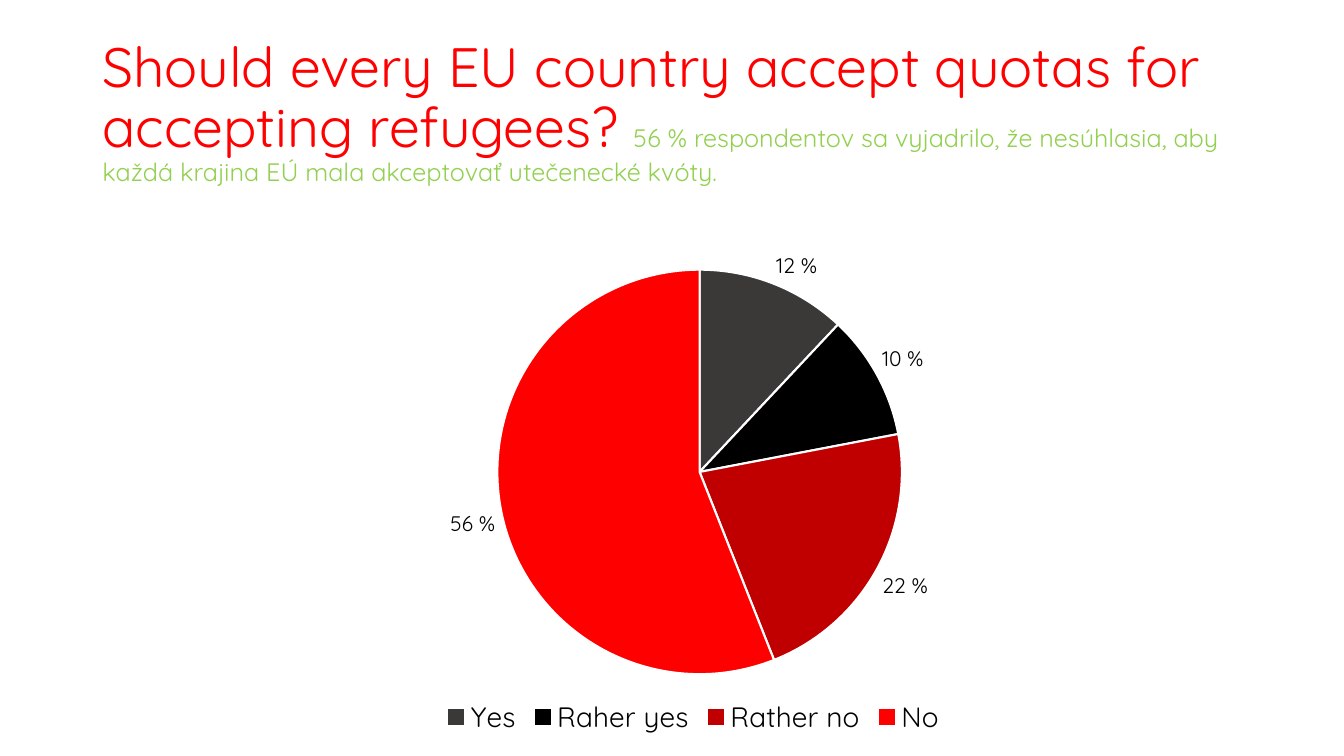
from lxml.etree import SubElement
from pptx import Presentation
from pptx.chart.data import CategoryChartData
from pptx.dml.color import RGBColor
from pptx.enum.chart import XL_CHART_TYPE, XL_LABEL_POSITION, XL_LEGEND_POSITION
from pptx.enum.text import MSO_ANCHOR
from pptx.oxml.ns import qn
from pptx.util import Pt

RED = RGBColor(0xFF, 0x00, 0x00)
DARK_RED = RGBColor(0xC0, 0x00, 0x00)
BLACK = RGBColor(0x00, 0x00, 0x00)
CHARCOAL = RGBColor(0x3B, 0x38, 0x38)
GREEN = RGBColor(0x92, 0xD0, 0x50)
WHITE = RGBColor(0xFF, 0xFF, 0xFF)

ANSWERS = [
    ("Yes", 12, CHARCOAL),
    ("Raher yes", 10, BLACK),
    ("Rather no", 22, DARK_RED),
    ("No", 56, RED),
]


def format_font(font, name="Quicksand", size=18, color=BLACK):
    font.name = name
    font.size = Pt(size)
    font.color.rgb = color


def add_run(paragraph, text, **font_format):
    run = paragraph.add_run()
    run.text = text
    format_font(run.font, **font_format)


class SurveySlide:
    def __init__(self, presentation, font_name):
        self.font_name = font_name
        self.slide = presentation.slides.add_slide(presentation.slide_layouts[6])

    def add_heading(self, left, top, width, height, parts):
        shape = self.slide.shapes.add_textbox(Pt(left), Pt(top), Pt(width), Pt(height))
        frame = shape.text_frame
        frame.word_wrap = True
        frame.vertical_anchor = MSO_ANCHOR.MIDDLE
        paragraph = frame.paragraphs[0]
        paragraph.line_spacing = 0.9
        for text, size, color in parts:
            add_run(paragraph, text, name=self.font_name, size=size, color=color)

    def add_pie(self, left, top, width, height, answers, plot_box):
        data = CategoryChartData(number_format='0" %"')
        data.categories = [name for name, value, color in answers]
        data.add_series("Series 1", [value for name, value, color in answers])
        chart = self.slide.shapes.add_chart(
            XL_CHART_TYPE.PIE, Pt(left), Pt(top), Pt(width), Pt(height), data
        ).chart
        chart.has_title = False
        format_font(chart.font, name="Calibri", size=10)
        chart.has_legend = True
        chart.legend.position = XL_LEGEND_POSITION.BOTTOM
        chart.legend.include_in_layout = False
        format_font(chart.legend.font, name=self.font_name, size=20)

        plot = chart.plots[0]
        plot.vary_by_categories = True
        for index, (name, value, color) in enumerate(answers):
            slice_format = plot.series[0].points[index].format
            slice_format.fill.solid()
            slice_format.fill.fore_color.rgb = color
            slice_format.line.color.rgb = WHITE
            slice_format.line.width = Pt(1.5)

        labels = plot.series[0].data_labels
        labels.show_value = True
        labels.show_percentage = False
        labels.number_format = '0" %"'
        labels.number_format_is_linked = False
        labels.position = XL_LABEL_POSITION.OUTSIDE_END
        format_font(labels.font, name=self.font_name, size=15)
        self.place_plot(chart, plot_box)

    def place_plot(self, chart, plot_box):
        plot_area = chart.element.find(".//" + qn("c:plotArea"))
        layout = plot_area.find(qn("c:layout"))
        if layout is None:
            layout = SubElement(plot_area, qn("c:layout"))
            plot_area.insert(0, layout)
        manual = SubElement(layout, qn("c:manualLayout"))
        settings = [("layoutTarget", "inner"), ("xMode", "edge"), ("yMode", "edge")]
        for tag, value in settings + list(zip("xywh", plot_box)):
            SubElement(manual, qn("c:" + tag)).set("val", str(value))


def main():
    presentation = Presentation()
    presentation.slide_width = Pt(960)
    presentation.slide_height = Pt(540)
    survey = SurveySlide(presentation, "Quicksand")
    survey.add_heading(66, 28.75, 828, 104.4, [
        ("Should every EU country accept quotas for accepting refugees? ", 39.6, RED),
        ("56 % respondentov sa vyjadrilo, že nesúhlasia, aby každá krajina EÚ "
         "mala akceptovať utečenecké kvóty.", 18, GREEN),
    ])
    survey.add_pie(44.6, 163.4, 901.4, 365.8, ANSWERS, (0.34, 0.08, 0.33, 0.79))
    presentation.save("out.pptx")


if __name__ == "__main__":
    main()
